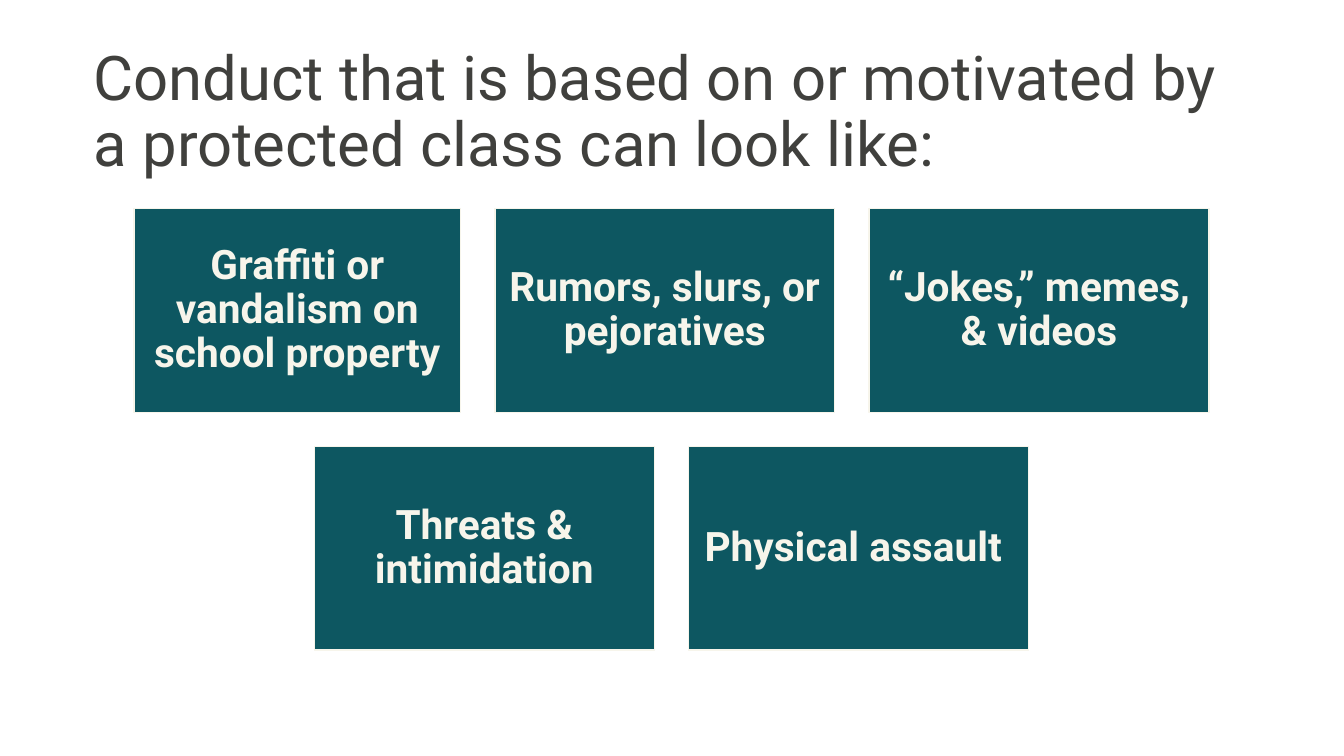
"""Build a slide listing five examples of conduct based on a protected class."""
from pptx import Presentation
from pptx import util as u
from pptx.dml.color import RGBColor
from pptx.enum import shapes, text

PX = 9144
FONT = "Roboto"
TEAL, CREAM, CHARCOAL = "0D5761", "F7F5EB", "40403D"
CARD_WIDTH, CARD_HEIGHT, GAP = 337, 202, 34
ROWS = [
    (133, 207, [("Graffiti or vandalism on school property", 324),
                ("Rumors, slurs, or pejoratives", CARD_WIDTH),
                ("“Jokes,” memes, & videos", CARD_WIDTH)]),
    (312, 443, [("Threats & intimidation", CARD_WIDTH),
                ("Physical assault ", CARD_WIDTH)]),
]


def px(length):
    """Turn whole pixels into EMU."""
    return u.Emu(length * PX)


def color(value):
    """Turn a hex string into a colour."""
    return RGBColor.from_string(value)


def write(frame, words, size, fill, bold=False, align=text.PP_ALIGN.LEFT):
    """Put one formatted, vertically centred paragraph in a text frame."""
    frame.word_wrap = True
    frame.auto_size = text.MSO_AUTO_SIZE.NONE
    frame.vertical_anchor = text.MSO_ANCHOR.MIDDLE
    para = frame.paragraphs[0]
    para.alignment = align
    para.line_spacing = 0.9
    para.space_before = u.Pt(0)
    span = para.add_run()
    span.text = words
    span.font.name = FONT
    span.font.size = u.Pt(size)
    span.font.bold = bold
    span.font.color.rgb = color(fill)


def add_title(page, words):
    """Place and fill the title placeholder."""
    title = page.shapes.title
    title.left, title.top = px(83), px(40)
    title.width, title.height = px(1162), px(145)
    write(title.text_frame, words, size=44, fill=CHARCOAL)


def add_card(page, words, left, top, width):
    """Draw one teal card with centred bold text."""
    card = page.shapes.add_shape(shapes.MSO_SHAPE.RECTANGLE, px(left), px(top),
                                 px(width), px(CARD_HEIGHT))
    card.shadow.inherit = False
    card.fill.solid()
    card.fill.fore_color.rgb = color(TEAL)
    card.line.color.rgb = color(CREAM)
    card.line.width = u.Pt(1)
    frame = card.text_frame
    frame.margin_left = frame.margin_right = px(12)
    frame.margin_top = frame.margin_bottom = px(12)
    write(frame, words, size=29, fill=CREAM, bold=True, align=text.PP_ALIGN.CENTER)


def main():
    """Build and save the deck."""
    deck = Presentation()
    deck.slide_width, deck.slide_height = px(1333), px(750)
    page = deck.slides.add_slide(deck.slide_layouts[5])
    add_title(page, "Conduct that is based on or motivated by a protected class can look like:")
    for left, top, cards in ROWS:
        for words, width in cards:
            add_card(page, words, left, top, width)
            left += width + GAP
    deck.save("out.pptx")


if __name__ == "__main__":
    main()
